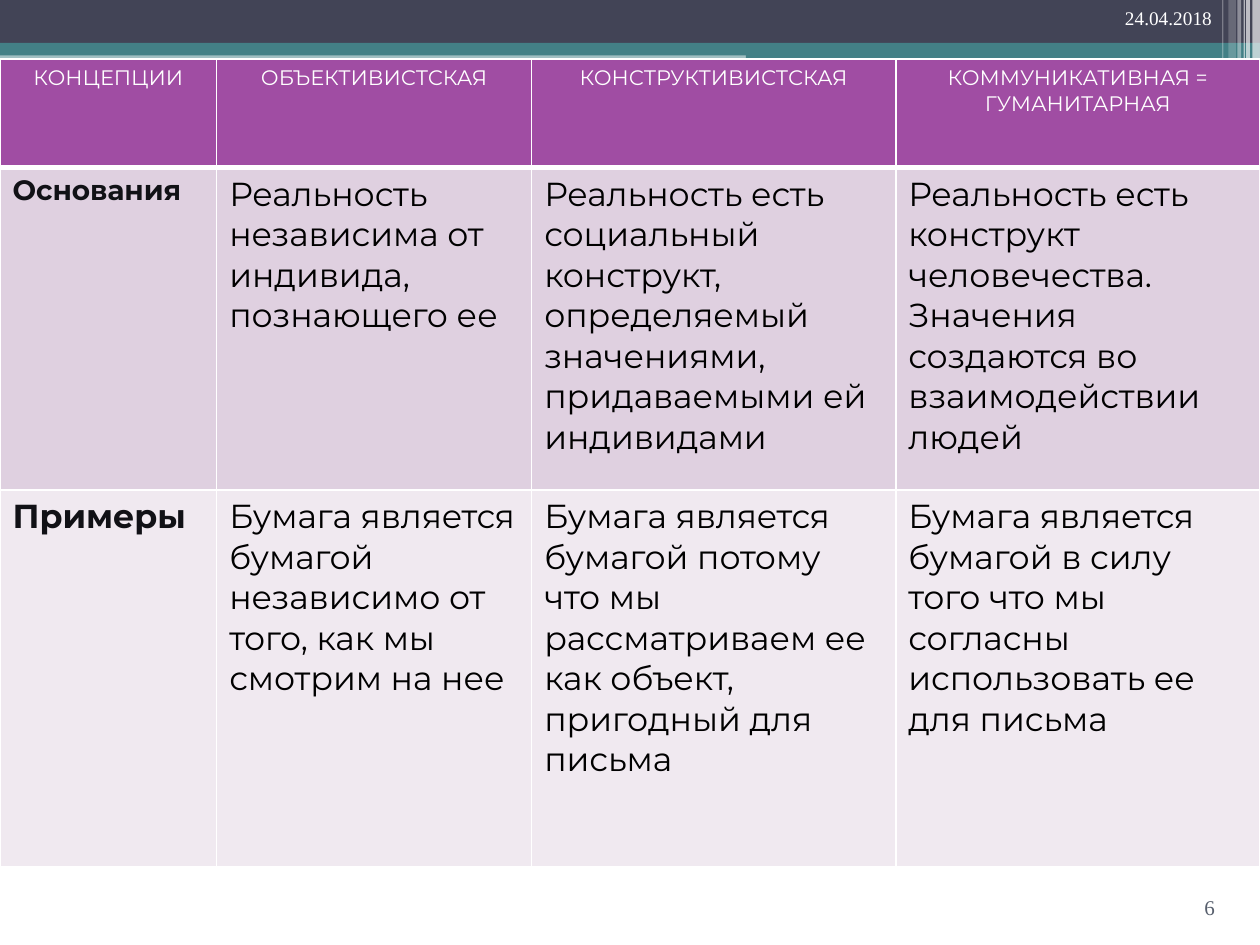
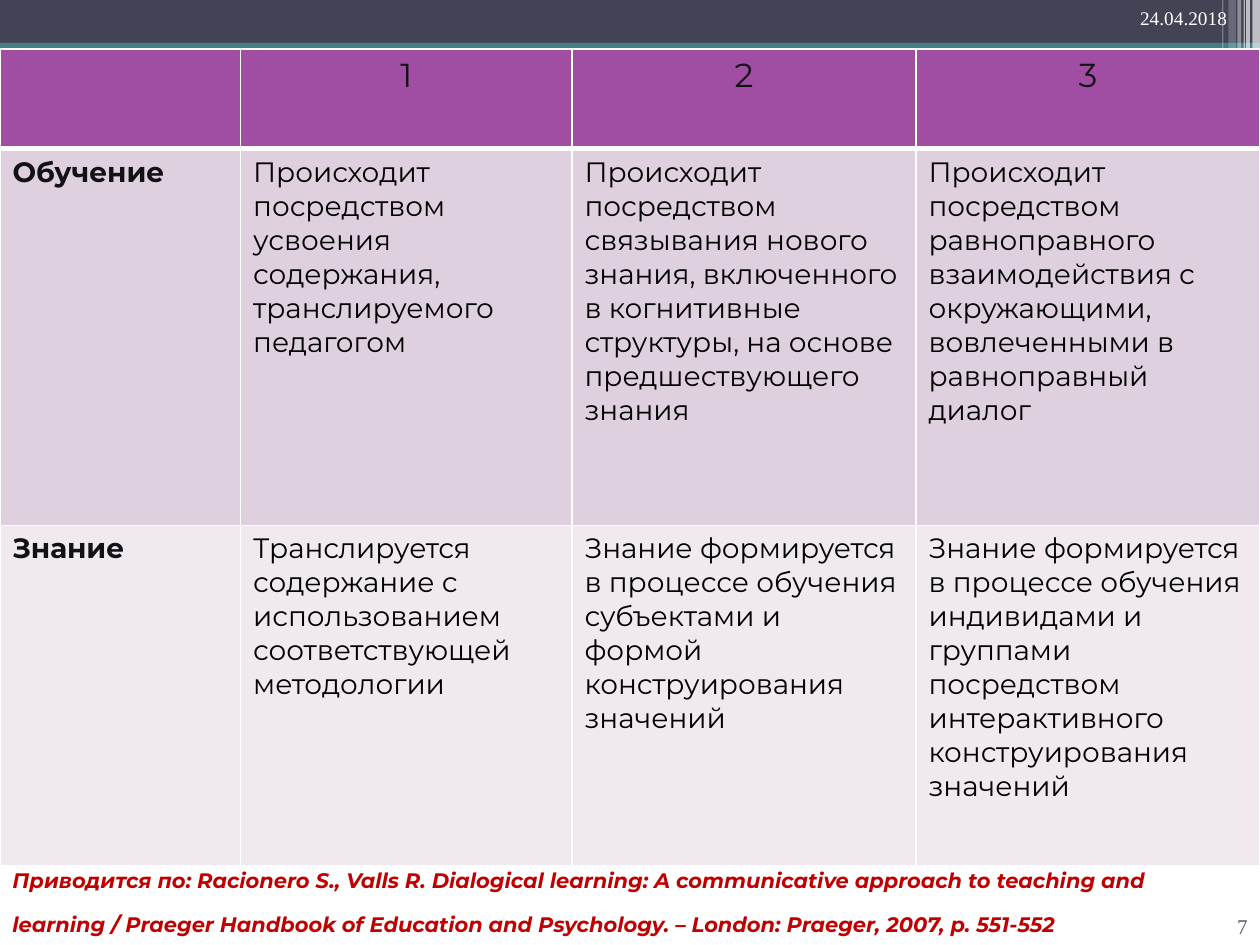
from dataclasses import dataclass

from lxml.etree import SubElement
from pptx import Presentation
from pptx.dml.color import RGBColor
from pptx.enum.shapes import MSO_SHAPE
from pptx.enum.text import MSO_ANCHOR, PP_ALIGN
from pptx.oxml.ns import qn
from pptx.slide import Slide
from pptx.table import _Cell
from pptx.text.text import TextFrame
from pptx.util import Inches, Pt

COLORS = {
    "navy": "424456",
    "teal": "438086",
    "white": "FFFFFF",
    "purple": "A04DA3",
    "lilac": "DFD0E0",
    "pale": "F0E9F0",
    "ink": "111116",
    "black": "000000",
    "grey": "575F6D",
    "red": "C00000",
}
TABLE_FONT = "Montserrat"
FOOTER_FONT = "Times New Roman"
ROW_FILLS = ["purple", "lilac", "pale"]


@dataclass(frozen=True)
class Band:
    left: float
    top: float
    width: float
    height: float
    color: str = "white"
    opacity: int = 100
    rounded: bool = False


@dataclass(frozen=True)
class ConceptTable:
    top: float
    columns: list[float]
    rows: list[float]
    header_size: int
    header_color: str
    label_sizes: list[int]
    body_size: int
    texts: list[list[str]]


@dataclass(frozen=True)
class Page:
    number: str
    date_left: float
    number_left: float
    number_top: float
    table: ConceptTable


BANDS = [
    Band(0, 0.4, 10, 0.09, "teal", 50),
    Band(0, 0, 10, 0.34, "navy"),
    Band(0, 0.34, 10, 0.1, "teal"),
    Band(5.92, 0.39, 4.08, 0.1, "teal"),
    Band(5.92, 0.48, 4.08, 0.2, "teal", 50),
    Band(5.91, 0.54, 3.35, 0.03, rounded=True),
    Band(8.06, 0.64, 1.75, 0.04, rounded=True),
    Band(9.94, 0, 0.06, 0.68, opacity=65),
    Band(9.89, 0, 0.03, 0.68, opacity=65),
    Band(9.87, 0, 0.01, 0.68, opacity=60),
    Band(9.82, 0, 0.03, 0.68, opacity=40),
    Band(9.75, 0, 0.06, 0.64, opacity=20),
    Band(9.7, 0, 0.01, 0.64, opacity=30),
]

PAGES = [
    Page("6", 8.83, 8.91, 6.95, ConceptTable(
        top=0.47,
        columns=[1.72, 2.5, 2.89, 2.89],
        rows=[0.86, 2.56, 2.99],
        header_size=12,
        header_color="white",
        label_sizes=[16, 19],
        body_size=19,
        texts=[
            ["КОНЦЕПЦИИ", "ОБЪЕКТИВИСТСКАЯ", "КОНСТРУКТИВИСТСКАЯ",
             "КОММУНИКАТИВНАЯ =\nГУМАНИТАРНАЯ"],
            ["Основания",
             "Реальность независима от индивида, познающего ее",
             "Реальность есть социальный конструкт, определяемый значениями, "
             "придаваемыми ей индивидами",
             "Реальность есть конструкт человечества. Значения создаются "
             "во взаимодействии людей"],
            ["Примеры",
             "Бумага является бумагой независимо от того, как мы смотрим на нее",
             "Бумага является бумагой потому что мы рассматриваем ее как объект, "
             "пригодный для письма",
             "Бумага является бумагой в силу того что мы согласны использовать ее "
             "для письма"],
        ],
    )),
    Page("7", 8.95, 9.17, 7.1, ConceptTable(
        top=0.39,
        columns=[1.91, 2.63, 2.73, 2.73],
        rows=[0.79, 2.99, 2.7],
        header_size=19,
        header_color="ink",
        label_sizes=[16, 16],
        body_size=16,
        texts=[
            ["", "1", "2", "3"],
            ["Обучение",
             "Происходит посредством усвоения содержания, транслируемого педагогом",
             "Происходит посредством связывания нового знания, включенного "
             "в когнитивные структуры, на основе предшествующего знания",
             "Происходит посредством равноправного взаимодействия с окружающими, "
             "вовлеченными в равноправный диалог"],
            ["Знание",
             "Транслируется содержание с использованием соответствующей методологии",
             "Знание формируется в процессе обучения субъектами и формой "
             "конструирования значений",
             "Знание формируется в процессе обучения индивидами и группами "
             "посредством интерактивного конструирования значений"],
        ],
    )),
]
CITATION = (
    "Приводится по: Racionero S., Valls R. Dialogical learning: A communicative "
    "approach to teaching and learning / Praeger Handbook of Education and "
    "Psychology. – London: Praeger, 2007, p. 551-552"
)


def rgb(color: str) -> RGBColor:
    return RGBColor.from_string(COLORS[color])


def write_text(frame: TextFrame, text: str, *, size: int, color: str,
               font: str = TABLE_FONT, bold: bool = False, italic: bool = False,
               align: PP_ALIGN = PP_ALIGN.LEFT, line_points: int | None = None) -> None:
    """Fill the frame with one formatted paragraph per line of text."""
    frame.word_wrap = True
    frame.text = text
    for paragraph in frame.paragraphs:
        paragraph.alignment = align
        if line_points:
            paragraph.line_spacing = Pt(line_points)
        paragraph.font.name = font
        paragraph.font.size = Pt(size)
        paragraph.font.bold = bold
        paragraph.font.italic = italic
        paragraph.font.color.rgb = rgb(color)


def add_text_box(slide: Slide, left: float, top: float, width: float,
                 height: float) -> TextFrame:
    box = slide.shapes.add_textbox(Inches(left), Inches(top), Inches(width), Inches(height))
    return box.text_frame


def add_band(slide: Slide, band: Band) -> None:
    preset = MSO_SHAPE.ROUNDED_RECTANGLE if band.rounded else MSO_SHAPE.RECTANGLE
    shape = slide.shapes.add_shape(preset, Inches(band.left), Inches(band.top),
                                   Inches(band.width), Inches(band.height))
    shape.shadow.inherit = False
    shape.line.fill.background()
    shape.fill.solid()
    shape.fill.fore_color.rgb = rgb(band.color)
    if band.opacity < 100:
        color_element = shape.fill._xPr.find(qn("a:solidFill"))[0]
        SubElement(color_element, qn("a:alpha"), val=str(band.opacity * 1000))


def format_cell(cell: _Cell, fill: str, bottom_width: int) -> None:
    """Set white borders, which must come before the fill, and the fill."""
    properties = cell._tc.get_or_add_tcPr()
    for side in "LRTB":
        width = bottom_width if side == "B" else 1
        border = SubElement(properties, qn(f"a:ln{side}"), w=str(Pt(width)))
        line_fill = SubElement(border, qn("a:solidFill"))
        SubElement(line_fill, qn("a:srgbClr"), val=COLORS["white"])
    cell.fill.solid()
    cell.fill.fore_color.rgb = rgb(fill)


def add_concept_table(slide: Slide, content: ConceptTable) -> None:
    frame = slide.shapes.add_table(
        len(content.rows), len(content.columns), Inches(0), Inches(content.top),
        Inches(sum(content.columns)), Inches(sum(content.rows)))
    table = frame.table
    for column, width in zip(table.columns, content.columns):
        column.width = Inches(width)
    for row_index, texts in enumerate(content.texts):
        table.rows[row_index].height = Inches(content.rows[row_index])
        is_header = row_index == 0
        for column_index, text in enumerate(texts):
            cell = table.cell(row_index, column_index)
            format_cell(cell, ROW_FILLS[row_index], 3 if is_header else 1)
            if is_header:
                write_text(cell.text_frame, text, size=content.header_size,
                           color=content.header_color, align=PP_ALIGN.CENTER)
            elif column_index == 0:
                write_text(cell.text_frame, text, color="ink", bold=True,
                           size=content.label_sizes[row_index - 1])
            else:
                write_text(cell.text_frame, text, size=content.body_size, color="black")


def add_footers(slide: Slide, page: Page) -> None:
    date = add_text_box(slide, page.date_left, 0, 1.05, 0.5)
    write_text(date, "24.04.2018", size=11, color="white", font=FOOTER_FONT)
    number = add_text_box(slide, page.number_left, page.number_top, 0.83, 0.4)
    number.vertical_anchor = MSO_ANCHOR.BOTTOM
    write_text(number, page.number, size=12, color="grey", font=FOOTER_FONT,
               align=PP_ALIGN.RIGHT)


def add_citation(slide: Slide) -> None:
    frame = add_text_box(slide, 0, 6.74, 9.75, 0.7)
    frame.margin_top = frame.margin_bottom = 0
    frame.margin_right = Inches(0.22)
    write_text(frame, CITATION, size=12, color="red", bold=True, italic=True,
               line_points=25)


def main() -> None:
    presentation = Presentation()
    presentation.slide_width = Inches(10)
    presentation.slide_height = Inches(7.5)
    blank_layout = presentation.slide_layouts.get_by_name("Blank")
    for page in PAGES:
        slide = presentation.slides.add_slide(blank_layout)
        for band in BANDS:
            add_band(slide, band)
        add_footers(slide, page)
        add_concept_table(slide, page.table)
    add_citation(slide)
    presentation.save("out.pptx")


if __name__ == "__main__":
    main()
